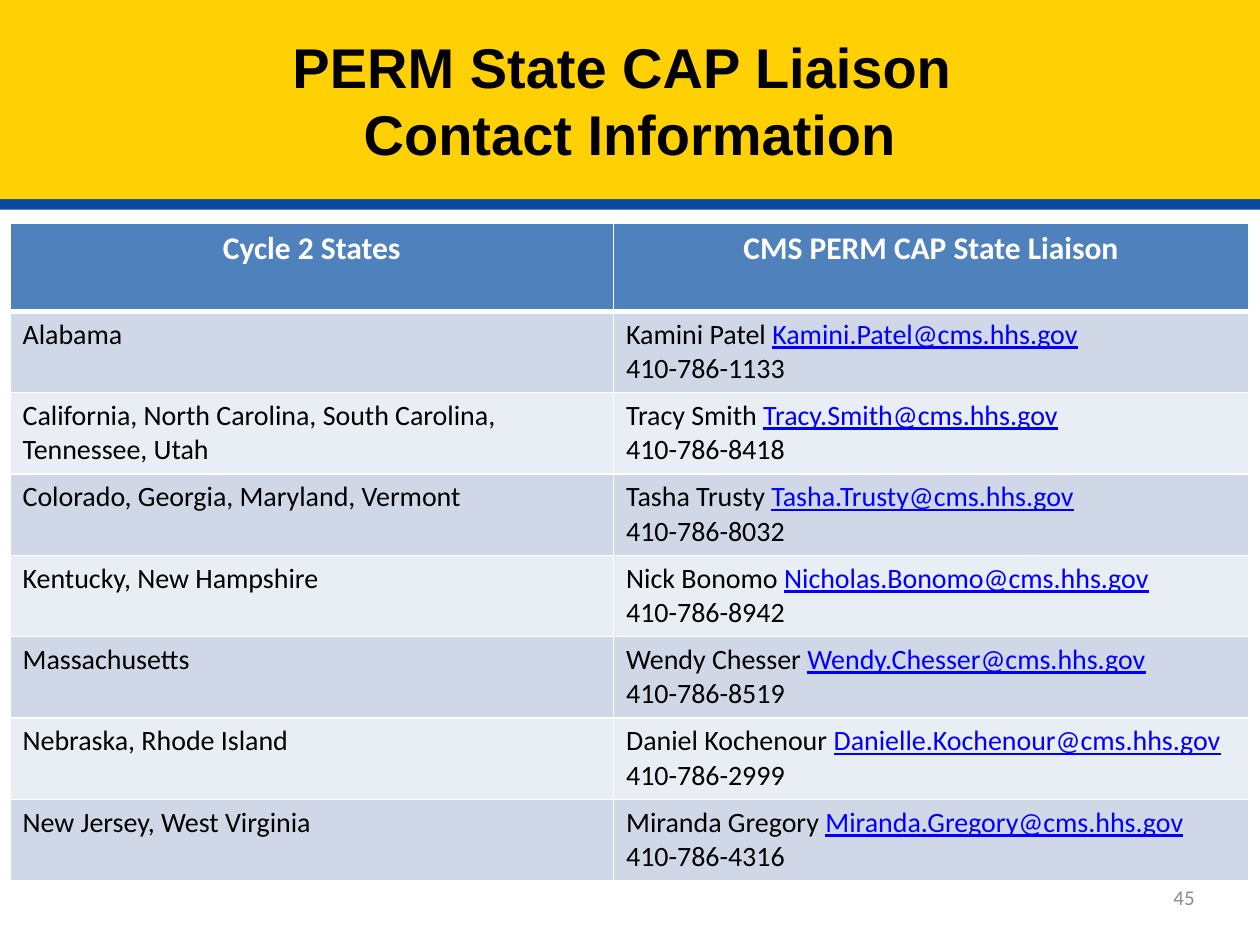
from lxml.etree import SubElement
from pptx import Presentation
from pptx.dml.color import RGBColor
from pptx.enum.text import MSO_ANCHOR, PP_ALIGN
from pptx.oxml.ns import qn
from pptx.util import Inches, Pt

YELLOW = RGBColor(0xFF, 0xD0, 0x04)
NAVY = RGBColor(0x08, 0x4A, 0x9C)
BLACK = RGBColor(0, 0, 0)
WHITE = RGBColor(0xFF, 0xFF, 0xFF)
GRAY = RGBColor(0x8C, 0x8C, 0x8C)
LINK_BLUE = RGBColor(0, 0, 0xFF)
HEADER_BLUE = RGBColor(0x4F, 0x81, 0xBD)
BANDS = [RGBColor(0xD0, 0xD8, 0xE8), RGBColor(0xE9, 0xED, 0xF4)]

HEADERS = ["Cycle 2 States", "CMS PERM CAP State Liaison"]
LIAISONS = [
    ("Alabama", "Kamini Patel", "Kamini.Patel", "1133"),
    ("California, North Carolina, South Carolina, Tennessee, Utah",
     "Tracy Smith", "Tracy.Smith", "8418"),
    ("Colorado, Georgia, Maryland, Vermont", "Tasha Trusty", "Tasha.Trusty", "8032"),
    ("Kentucky, New Hampshire", "Nick Bonomo", "Nicholas.Bonomo", "8942"),
    ("Massachusetts", "Wendy Chesser", "Wendy.Chesser", "8519"),
    ("Nebraska, Rhode Island", "Daniel Kochenour", "Danielle.Kochenour", "2999"),
    ("New Jersey, West Virginia", "Miranda Gregory", "Miranda.Gregory", "4316"),
]


def add_run(p, text, size, color=BLACK, bold=False, underline=False, font="Calibri"):
    """Append a formatted run to a paragraph."""
    r = p.add_run()
    r.text = text
    r.font.name = font
    r.font.size = Pt(size)
    r.font.bold = bold
    r.font.underline = underline
    r.font.color.rgb = color


def add_drop_shadow(sp, color, distance):
    """Give a shape a hard shadow straight below it."""
    effects = SubElement(sp._element.spPr, qn("a:effectLst"))
    shadow = SubElement(effects, qn("a:outerShdw"), blurRad="0", dist=str(distance),
                        dir="5400000", algn="tl", rotWithShape="0")
    SubElement(shadow, qn("a:srgbClr"), val=str(color))


def place_title(s, left, top, width, height):
    """Turn the title placeholder into the yellow banner."""
    sp = s.shapes.title
    sp.left, sp.top, sp.width, sp.height = left, top, width, height
    sp.fill.solid()
    sp.fill.fore_color.rgb = YELLOW
    add_drop_shadow(sp, NAVY, Pt(6))
    tf = sp.text_frame
    tf.vertical_anchor = MSO_ANCHOR.MIDDLE
    p = tf.paragraphs[0]
    p.alignment = PP_ALIGN.CENTER
    add_run(p, "PERM State CAP Liaison ", 32, bold=True, font="Arial")
    p.add_line_break()
    add_run(p, "Contact Information", 32, bold=True, font="Arial")


def format_cell(cell, color, bottom=1):
    """Fill a cell and draw its white borders."""
    tc_pr = cell._tc.get_or_add_tcPr()
    for side, width in (("lnL", 1), ("lnR", 1), ("lnT", 1), ("lnB", bottom)):
        ln = SubElement(tc_pr, qn(f"a:{side}"), w=str(Pt(width)))
        fill = SubElement(ln, qn("a:solidFill"))
        SubElement(fill, qn("a:srgbClr"), val=str(WHITE))
    cell.fill.solid()
    cell.fill.fore_color.rgb = color


def place_table(s, left, top, width, height):
    """Add the table of states and their liaisons."""
    table = s.shapes.add_table(len(LIAISONS) + 1, 2, left, top, width, height).table
    table.columns[0].width = Inches(4.79)
    table.columns[1].width = width - Inches(4.79)
    table.rows[0].height = Inches(0.7)
    for col, text in enumerate(HEADERS):
        cell = table.cell(0, col)
        format_cell(cell, HEADER_BLUE, bottom=3)
        p = cell.text_frame.paragraphs[0]
        p.alignment = PP_ALIGN.CENTER
        add_run(p, text, 18, WHITE, bold=True)
    for row, (states, name, mailbox, extension) in enumerate(LIAISONS, 1):
        table.rows[row].height = (height - Inches(0.7)) // len(LIAISONS)
        state_cell, liaison_cell = table.cell(row, 0), table.cell(row, 1)
        for cell in (state_cell, liaison_cell):
            format_cell(cell, BANDS[(row - 1) % 2])
        add_run(state_cell.text_frame.paragraphs[0], states, 16)
        tf = liaison_cell.text_frame
        p = tf.paragraphs[0]
        add_run(p, f"{name} ", 16)
        add_run(p, f"{mailbox}@cms.hhs.gov", 16, LINK_BLUE, underline=True)
        add_run(tf.add_paragraph(), f"410-786-{extension}", 16)


def place_page_number(s, left, top, width, height):
    """Add the page number at the lower right."""
    tf = s.shapes.add_textbox(left, top, width, height).text_frame
    tf.word_wrap = True
    tf.vertical_anchor = MSO_ANCHOR.MIDDLE
    p = tf.paragraphs[0]
    p.alignment = PP_ALIGN.RIGHT
    add_run(p, "45", 12, GRAY)


def main():
    """Build and save the slide."""
    prs = Presentation()
    prs.slide_width, prs.slide_height = Inches(10), Inches(7.5)
    s = prs.slides.add_slide(prs.slide_layouts[5])
    place_title(s, 0, 0, prs.slide_width, Inches(1.58))
    place_page_number(s, Inches(8.5), Inches(6.92), Inches(1.08), Inches(0.4))
    place_table(s, Inches(0.08), Inches(1.77), Inches(9.83), Inches(5.22))
    prs.save("out.pptx")


if __name__ == "__main__":
    main()
